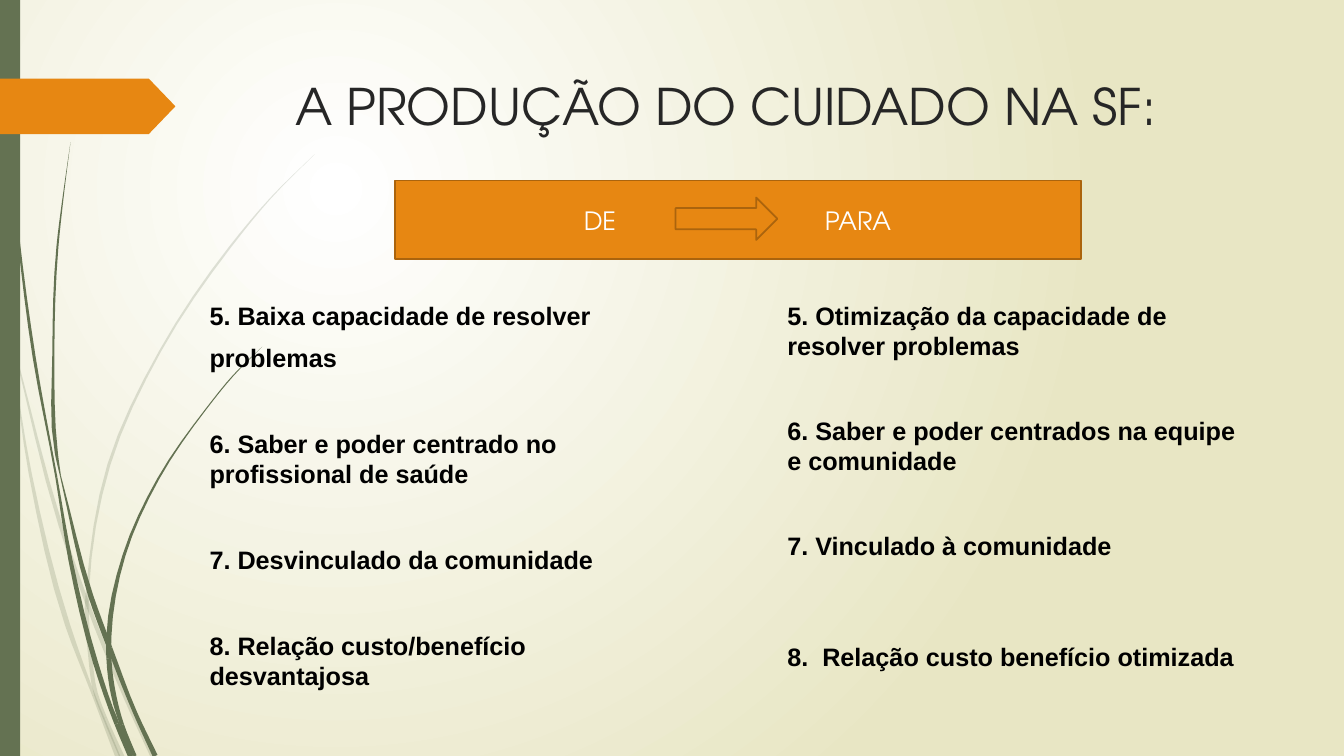
from math import hypot
from lxml import etree
from pptx import Presentation
from pptx import util as u
from pptx.dml.color import RGBColor
from pptx.enum import shapes, text
from pptx.oxml.ns import qn

PX = 9144
STEPS = 4
HUE = {"moss": "647252", "orange": "E78712", "rust": "AB640D", "ink": "262626",
       "black": "000000", "white": "FFFFFF", "sand": "E8E6C4"}
HEAD, BODY = "TeX Gyre Adventor", "Arial"

TITLE = "A PRODUÇÃO DO CUIDADO NA SF:"
LABELS = [("DE", 595), ("PARA", 851)]
COLUMNS = [
    (198, [("5. Baixa capacidade de resolver", 0),
           ("problemas", 12),
           ("6. Saber e poder centrado no profissional de saúde", 55),
           ("7. Desvinculado da comunidade", 55),
           ("8. Relação custo/benefício desvantajosa", 55)]),
    (771, [("5. Otimização da capacidade de resolver problemas", 0),
           ("6. Saber e poder centrados na equipe e comunidade", 54),
           ("7. Vinculado à comunidade", 54),
           ("8.  Relação custo benefício otimizada", 80)]),
]
PALE = [
    ([(0, 290, 3), (11, 350, 1), (30, 470, 3), (67, 620, 5), (93, 690, 3), (117, 751, 5)], (1, 4)),
    ([(14, 345, 1), (60, 521, 4), (86, 597, 4), (125, 693, 4), (152, 751, 5)], (2,)),
    ([(312, 153, 0), (268, 197, 1), (229, 244, 2), (159, 348, 2), (108, 461, 3),
      (87, 584, 3), (86, 604, 4), (89, 646, 4), (95, 688, 4), (104, 712, 4),
      (121, 751, 5)], (5, 6, 9)),
]
DARK = [
    ([(3, 0, 1), (7, 109, 2), (18, 233, 2), (34, 355, 3), (56, 474, 2),
      (70, 556, 4), (95, 658, 5), (116, 718, 5), (131, 750, 8)], (4, 7)),
    ([(60, 472, 1), (90, 591, 5), (109, 643, 5), (134, 707, 4), (154, 750, 5)], (2,)),
    ([(70, 141, 0), (63, 193, 1), (57, 245, 2), (53, 349, 2), (56, 450, 3), (60, 472, 1)], ()),
    ([(260, 344, 0), (231, 373, 1), (205, 405, 1), (157, 475, 2), (123, 551, 3),
      (108, 632, 5), (108, 653, 5), (113, 691, 5), (121, 719, 4), (134, 750, 3)], (5, 6, 8)),
]

deck = Presentation()
deck.slide_width, deck.slide_height = 1333 * PX, 750 * PX
slide = deck.slides.add_slide(deck.slide_layouts[6])


def rgb(key):
    return RGBColor.from_string(HUE[key])


def paint(shape, fill, line=None):
    shape.shadow.inherit = False
    shape.fill.solid()
    shape.fill.fore_color.rgb = rgb(fill)
    if line:
        shape.line.color.rgb = rgb(line)
        shape.line.width = u.Pt(1.25)
    else:
        shape.line.fill.background()


def block(kind, area, fill, line=None):
    shape = slide.shapes.add_shape(kind, *[n * PX for n in area])
    paint(shape, fill, line)
    return shape


def write(area, rows, font, size, key, bold=False, mid=False, align=text.PP_ALIGN.LEFT):
    frame = slide.shapes.add_textbox(*[n * PX for n in area]).text_frame
    frame.word_wrap = True
    frame.vertical_anchor = text.MSO_ANCHOR.MIDDLE if mid else text.MSO_ANCHOR.TOP
    for i, (words, gap) in enumerate(rows):
        para = frame.paragraphs[0] if i == 0 else frame.add_paragraph()
        para.text = words
        para.alignment = align
        para.space_before = u.Emu(gap * PX)
        face = para.runs[0].font
        face.name, face.size, face.bold = font, u.Pt(size), bold
        face.color.rgb = rgb(key)


def smooth(knots):
    span = [hypot(b[0] - a[0], b[1] - a[1]) for a, b in zip(knots, knots[1:])]
    rate = [[(q - p) / s for p, q in zip(a, b)] for a, b, s in zip(knots, knots[1:], span)]
    slope = [rate[0]]
    for h, k, r, s in zip(span, span[1:], rate, rate[1:]):
        slope.append([(k * p + h * q) / (h + k) for p, q in zip(r, s)])
    slope.append(rate[-1])
    line = [knots[0]]
    for i, h in enumerate(span):
        for k in range(1, STEPS + 1):
            t = k / STEPS
            v = 1 - t
            line.append(tuple(
                v * v * (1 + 2 * t) * p + t * t * (3 - 2 * t) * q + h * t * v * (v * m - t * n)
                for p, q, m, n in zip(knots[i], knots[i + 1], slope[i], slope[i + 1])))
    return line


def blade(knots, cuts, alpha=None):
    line = smooth(knots)
    left, right = [], []
    for i, (x, y, wide) in enumerate(line):
        old, new = line[max(i - 1, 0)], line[min(i + 1, len(line) - 1)]
        dx, dy = new[0] - old[0], new[1] - old[1]
        half = max(wide, 0) / 2 / hypot(dx, dy)
        left.append(((x - dy * half) * PX, (y + dx * half) * PX))
        right.append(((x + dy * half) * PX, (y - dx * half) * PX))
    marks = [0, *cuts, len(knots) - 1]
    for a, b in zip(marks, marks[1:]):
        part = slice(a * STEPS, b * STEPS + 1)
        edge = left[part] + right[part][::-1]
        form = slide.shapes.build_freeform(*edge[0])
        form.add_line_segments(edge[1:], close=True)
        shape = form.convert_to_shape()
        paint(shape, "moss")
        if alpha:
            tint = shape.fill._xPr.find(qn("a:solidFill"))[0]
            etree.SubElement(tint, qn("a:alpha")).set("val", str(alpha * 1000))


def backdrop():
    fill = slide.background.fill
    fill.gradient()
    for stop, key in zip(fill.gradient_stops, ("white", "sand")):
        stop.color.rgb = rgb(key)
    grad = next(slide._element.iter(qn("a:gradFill")))
    lin = grad.find(qn("a:lin"))
    ring = etree.Element(qn("a:path"), {"path": "circle"})
    etree.SubElement(ring, qn("a:fillToRect"),
                     {"l": "50000", "t": "50000", "r": "100000", "b": "100000"})
    grad.replace(lin, ring)


def main():
    kind = shapes.MSO_SHAPE
    backdrop()
    for knots, cuts in PALE:
        blade(knots, cuts, 20)
    for knots, cuts in DARK:
        blade(knots, cuts)
    block(kind.RECTANGLE, (0, 0, 20, 750), "moss")
    tag = block(kind.PENTAGON, (0, 78, 174, 55), "orange")
    tag.adjustments[0] = 0.48
    write((283, 67, 975, 75), [(TITLE, 0)], HEAD, 36, "ink", mid=True)
    for left, rows in COLUMNS:
        write((left, 293, 472, 413), rows, BODY, 18, "black", bold=True)
    block(kind.RECTANGLE, (392, 179, 680, 78), "orange", "rust")
    for words, x in LABELS:
        write((x - 60, 180, 120, 78), [(words, 0)], HEAD, 18, "white",
              mid=True, align=text.PP_ALIGN.CENTER)
    block(kind.RIGHT_ARROW, (670, 196, 101, 42), "orange", "rust")
    deck.save("out.pptx")


if __name__ == "__main__":
    main()
